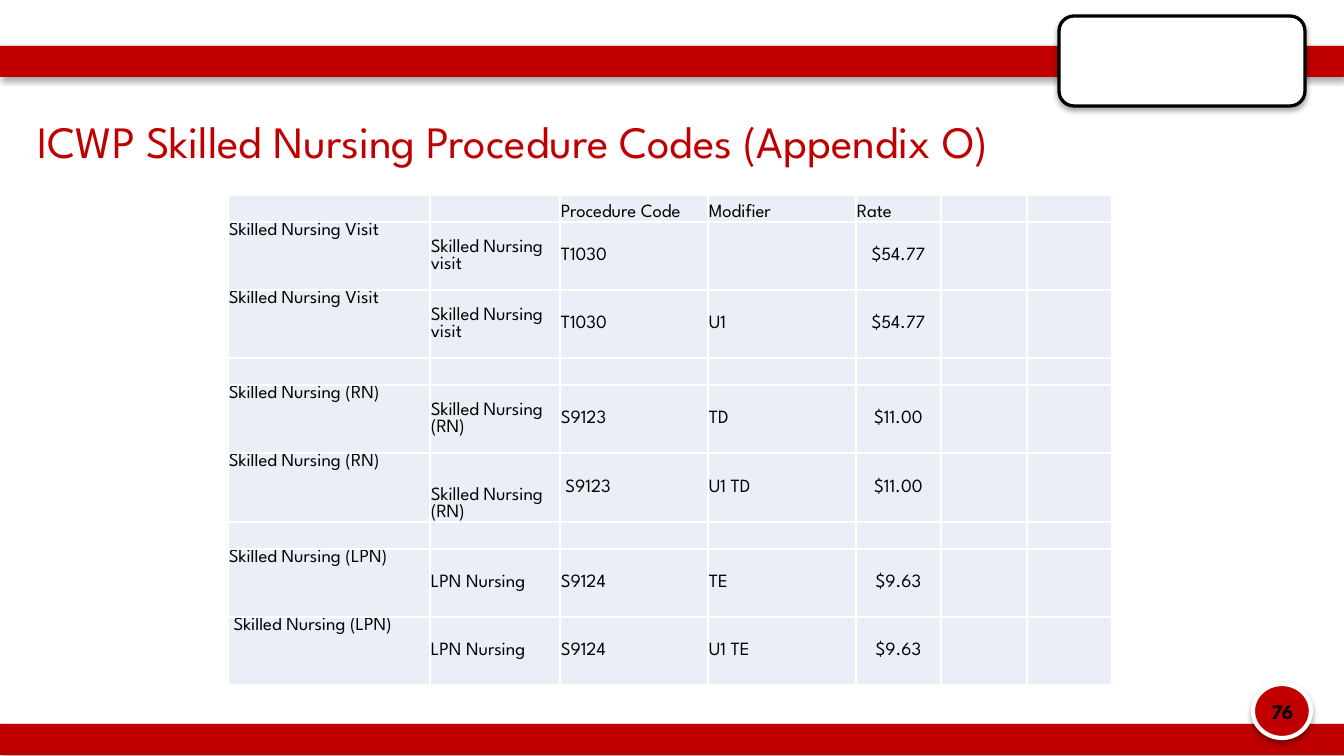
from dataclasses import dataclass

from lxml.etree import SubElement
from pptx import Presentation
from pptx.dml.color import RGBColor
from pptx.enum.shapes import MSO_SHAPE as Preset
from pptx.enum.text import MSO_ANCHOR as Anchor, PP_ALIGN as Align
from pptx.oxml import parse_xml
from pptx.oxml.ns import nsdecls, qn
from pptx.util import Emu, Pt

EMU_PER_PX = 914400 / 134.4
FONT = "League Spartan"
RED, WHITE, BLACK, PALE = "C00000", "FFFFFF", "000000", "EAEFF7"


@dataclass(frozen=True)
class Decoration:
    """A master shape with its box in px and its outline."""
    preset: Preset
    box: tuple[int, int, int, int]
    fill: str = RED
    outline: str | None = None
    weight: float = 0


@dataclass(frozen=True)
class Service:
    """One table row with its height in px."""
    height: int
    category: str = ""
    description: str = ""
    code: str = ""
    modifier: str = ""
    rate: str = ""
    description_anchor: Anchor = Anchor.MIDDLE


DECORATIONS = [
    Decoration(Preset.RECTANGLE, (0, 46, 1345, 31)),
    Decoration(Preset.RECTANGLE, (0, 724, 1345, 31)),
    Decoration(Preset.OVAL, (1253, 684, 58, 54), RED, WHITE, 2.25),
    Decoration(Preset.ROUNDED_RECTANGLE, (1059, 16, 246, 90), WHITE, BLACK, 1.75),
]
COLUMN_WIDTHS = [202, 130, 148, 148, 85, 86, 85]
SERVICES = [
    Service(27, code="Procedure Code", modifier="Modifier", rate="Rate"),
    Service(68, "Skilled Nursing Visit", "Skilled Nursing visit", "T1030", "", "$54.77"),
    Service(68, "Skilled Nursing Visit", "Skilled Nursing visit", "T1030", "U1", "$54.77"),
    Service(27),
    Service(68, "Skilled Nursing (RN)", "Skilled Nursing (RN)", "S9123", "TD", "$11.00"),
    Service(69, "Skilled Nursing (RN)", "Skilled Nursing (RN)", " S9123", "U1 TD", "$11.00",
            Anchor.BOTTOM),
    Service(27),
    Service(68, "Skilled Nursing (LPN)", "LPN Nursing", "S9124", "TE", "$9.63"),
    Service(68, " Skilled Nursing (LPN)", "LPN Nursing", "S9124", "U1 TE", "$9.63"),
]


def px(length: int) -> Emu:
    """Turn px into EMU."""
    return Emu(round(length * EMU_PER_PX))


def color(value: str) -> RGBColor:
    """Turn a hex string into a colour."""
    return RGBColor.from_string(value)


def write(frame, text: str, *, size: float, hue: str = BLACK, bold: bool = False,
          align: Align = Align.LEFT) -> None:
    """Write one formatted paragraph into a text frame."""
    frame.word_wrap = True
    paragraph = frame.paragraphs[0]
    paragraph.alignment = align
    paragraph.font.size = Pt(size)
    if text:
        run = paragraph.add_run()
        run.text = text
        run.font.name = FONT
        run.font.size = Pt(size)
        run.font.bold = bold
        run.font.color.rgb = color(hue)


def add_label(slide, box: tuple[int, int, int, int], text: str, anchor: Anchor,
              **style) -> None:
    """Add a text box at a px box."""
    frame = slide.shapes.add_textbox(*map(px, box)).text_frame
    frame.vertical_anchor = anchor
    write(frame, text, **style)


def add_decoration(slide, item: Decoration) -> None:
    """Draw a master shape with a soft shadow below it."""
    shape = slide.shapes.add_shape(item.preset, *map(px, item.box))
    shape.fill.solid()
    shape.fill.fore_color.rgb = color(item.fill)
    if item.outline:
        shape.line.color.rgb = color(item.outline)
        shape.line.width = Pt(item.weight)
    else:
        shape.line.fill.background()
    shape.shadow.inherit = False
    effects = shape._element.spPr.find(qn("a:effectLst"))
    effects.append(parse_xml(
        f'<a:outerShdw {nsdecls("a")} blurRad="{Pt(3.1)}" dist="{Pt(1.8)}" dir="5400000" '
        f'rotWithShape="0"><a:srgbClr val="{BLACK}"><a:alpha val="35000"/></a:srgbClr>'
        '</a:outerShdw>'))


def format_cell(cell, text: str, anchor: Anchor, align: Align) -> None:
    """Fill, border and write one table cell."""
    cell.margin_left = cell.margin_right = cell.margin_top = px(1)
    cell.margin_bottom = 0
    cell.vertical_anchor = anchor
    write(cell.text_frame, text, size=10, align=align)
    properties = cell._tc.get_or_add_tcPr()
    for side in ("lnL", "lnR", "lnT", "lnB"):
        border = SubElement(properties, qn(f"a:{side}"), w=str(Pt(1)))
        paint = SubElement(border, qn("a:solidFill"))
        SubElement(paint, qn("a:srgbClr"), val=WHITE)
    cell.fill.solid()
    cell.fill.fore_color.rgb = color(PALE)


def add_rates(slide) -> None:
    """Add the table of procedure codes and rates."""
    heights = [service.height for service in SERVICES]
    box = (228, 195, sum(COLUMN_WIDTHS), sum(heights))
    rates = slide.shapes.add_table(len(heights), len(COLUMN_WIDTHS), *map(px, box)).table
    rates.first_row = rates.horz_banding = False
    for column, width in zip(rates.columns, COLUMN_WIDTHS):
        column.width = px(width)
    for index, (row, service) in enumerate(zip(rates.rows, SERVICES)):
        row.height = px(service.height)
        texts = [service.category, service.description, service.code,
                 service.modifier, service.rate, "", ""]
        anchors = [Anchor.TOP, service.description_anchor] + [Anchor.MIDDLE] * 5
        if index == 0:
            anchors = [Anchor.BOTTOM] * 7
        for position, (cell, text, anchor) in enumerate(zip(row.cells, texts, anchors)):
            centred = index > 0 and position == 4
            format_cell(cell, text, anchor, Align.CENTER if centred else Align.LEFT)


def main() -> None:
    """Build and save the slide."""
    deck = Presentation()
    deck.slide_width, deck.slide_height = px(1344), px(756)
    slide = deck.slides.add_slide(deck.slide_layouts[6])
    for item in DECORATIONS:
        add_decoration(slide, item)
    add_label(slide, (1253, 700, 59, 22), "76", Anchor.MIDDLE,
              size=11, bold=True, align=Align.CENTER)
    add_label(slide, (24, 103, 1212, 71), "ICWP Skilled Nursing Procedure Codes (Appendix O)",
              Anchor.BOTTOM, size=24, hue=RED)
    add_rates(slide)
    deck.save("out.pptx")


if __name__ == "__main__":
    main()
